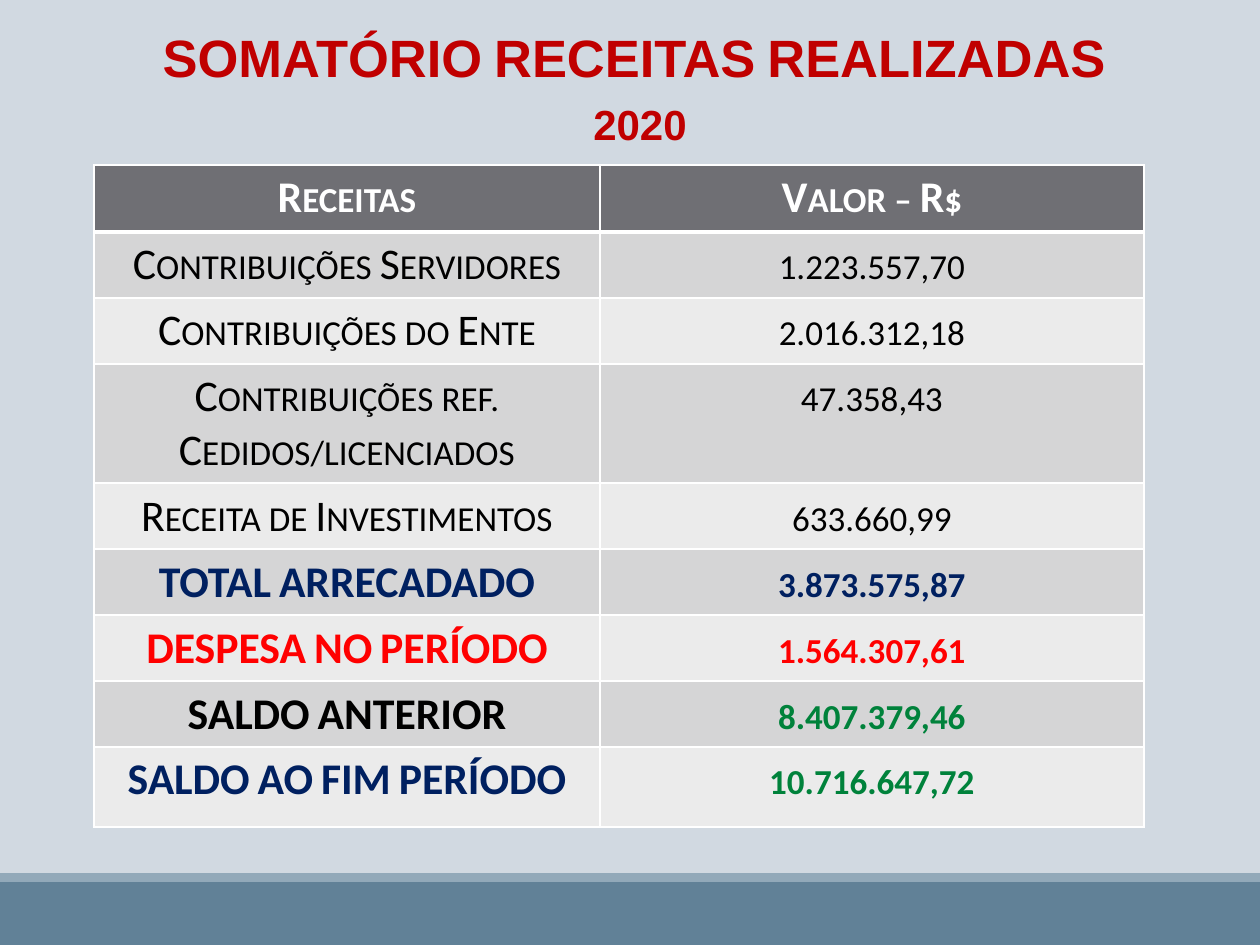
import pptx
import pptx.dml.color
import pptx.enum.shapes
import pptx.enum.text
import pptx.oxml.ns
import pptx.util
from lxml import etree

PX = 914400 / 126
WHITE, BLACK, NAVY, GREEN = "FFFFFF", "000000", "002060", "00823B"
RED, TITLE_RED = "FF0000", "C00000"
HEADER_FILL, BAND_FILLS = "6F6F74", ("D5D5D6", "EBEBEB")

# label, value, label colour, value colour, bold, row height
ROWS = [
    ("Receitas", "Valor – R$", WHITE, WHITE, True, 67),
    ("Contribuições Servidores", "1.223.557,70", BLACK, BLACK, False, 65),
    ("Contribuições do Ente", "2.016.312,18", BLACK, BLACK, False, 65),
    ("Contribuições ref. Cedidos/licenciados", "47.358,43", BLACK, BLACK, False, 118),
    ("Receita de Investimentos", "633.660,99", BLACK, BLACK, False, 65),
    ("TOTAL ARRECADADO", "3.873.575,87", NAVY, NAVY, True, 65),
    ("DESPESA NO PERÍODO", "1.564.307,61", RED, RED, True, 65),
    ("SALDO ANTERIOR", "8.407.379,46", BLACK, GREEN, True, 65),
    ("SALDO AO FIM PERÍODO", "10.716.647,72", NAVY, GREEN, True, 80),
]


def px(length):
    return pptx.util.Emu(round(length * PX))


def paint(fill, color):
    fill.solid()
    fill.fore_color.rgb = pptx.dml.color.RGBColor.from_string(color)


def write(para, text, font, size, color, bold):
    """Add one centred run in small capitals."""
    para.alignment = pptx.enum.text.PP_ALIGN.CENTER
    span = para.add_run()
    span.text = text
    span.font.name = font
    span.font.size = pptx.util.Pt(size)
    span.font.bold = bold
    paint(span.font.fill, color)
    span.font._element.set("cap", "small")


def add_border(cell, side, width):
    properties = cell._tc.get_or_add_tcPr()
    line = etree.SubElement(properties, pptx.oxml.ns.qn("a:ln" + side),
                            w=str(pptx.util.Pt(width)))
    fill = etree.SubElement(line, pptx.oxml.ns.qn("a:solidFill"))
    etree.SubElement(fill, pptx.oxml.ns.qn("a:srgbClr"), val=WHITE)


def add_title(page, left, top, width, height):
    title = page.shapes.title
    title.left, title.top, title.width, title.height = map(px, (left, top, width, height))
    frame = title.text_frame
    frame.word_wrap = True
    frame.auto_size = pptx.enum.text.MSO_AUTO_SIZE.NONE
    frame.vertical_anchor = pptx.enum.text.MSO_ANCHOR.MIDDLE
    write(frame.paragraphs[0], "SOMATÓRIO RECEITAS REALIZADAS ", "Arial", 30, TITLE_RED, True)
    write(frame.add_paragraph(), "2020", "Arial", 30, TITLE_RED, True)


def add_footer(page, left, top, width, height):
    stripe = 9
    bands = [(top + stripe, height - stripe, "618197"), (top, stripe, "92A9B9")]
    for band_top, band_height, color in bands:
        band = page.shapes.add_shape(pptx.enum.shapes.MSO_SHAPE.RECTANGLE,
                                     px(left), px(band_top), px(width), px(band_height))
        band.shadow.inherit = False
        paint(band.fill, color)
        band.line.fill.background()


def add_revenue_table(page, left, top, width, height):
    label_width = 506
    table = page.shapes.add_table(len(ROWS), 2, px(left), px(top), px(width), px(height)).table
    table.columns[0].width = px(label_width)
    table.columns[1].width = px(width - label_width)
    for index, (label, value, label_color, value_color, bold, row_height) in enumerate(ROWS):
        table.rows[index].height = px(row_height)
        row_fill = BAND_FILLS[(index - 1) % 2] if index else HEADER_FILL
        for column, (text, color) in enumerate([(label, label_color), (value, value_color)]):
            cell = table.cell(index, column)
            for side in "LRTB":
                header_edge = (index, side) in ((0, "B"), (1, "T"))
                add_border(cell, side, 3 if header_edge else 1)
            paint(cell.fill, row_fill)
            write(cell.text_frame.paragraphs[0], text, "Calibri", 25, color, bold)


def main():
    deck = pptx.Presentation()
    deck.slide_width, deck.slide_height = px(1260), px(945)
    page = deck.slides.add_slide(deck.slide_layouts[5])
    paint(page.background.fill, "D1D9E1")
    add_footer(page, 0, 873, 1260, 72)
    add_title(page, 92, 18, 1096, 140)
    add_revenue_table(page, 94, 165, 1050, 655)
    deck.save("out.pptx")


if __name__ == "__main__":
    main()
